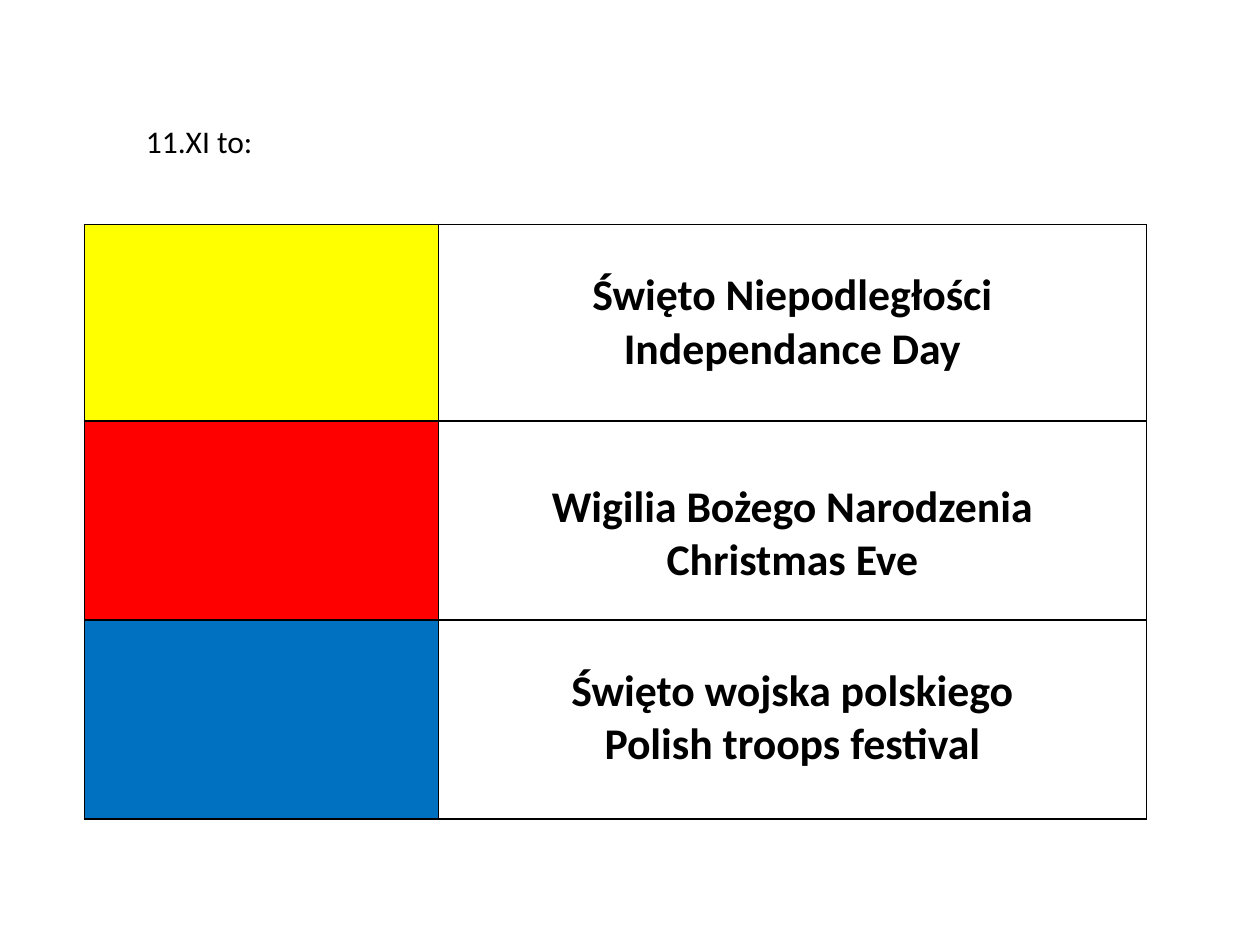
"""Build a quiz slide with three coloured answers about 11 November."""
from lxml.etree import SubElement
from pptx import Presentation
from pptx.dml.color import RGBColor
from pptx.enum.text import MSO_AUTO_SIZE, PP_ALIGN
from pptx.oxml.ns import qn
from pptx.util import Pt

BLACK = RGBColor(0, 0, 0)
YELLOW = RGBColor(0xFF, 0xFF, 0)
RED = RGBColor(0xFF, 0, 0)
BLUE = RGBColor(0, 0x70, 0xC0)
FONT = "Calibri"

QUESTION = "11.XI to:"
ANSWERS = [
    (YELLOW, "Święto Niepodległości\vIndependance Day", 112.3, 25.6),
    (RED, "Wigilia Bożego Narodzenia\nChristmas Eve", 113.8, 34.1),
    (BLUE, "Święto wojska polskiego\nPolish troops festival", 113.8, 25.6),
]
COLUMN_WIDTHS = (202.3, 404.6)


def style_text(frame, size, bold, alignment):
    for para in frame.paragraphs:
        para.alignment = alignment
        for span in para.runs:
            span.font.name = FONT
            span.font.size = Pt(size)
            span.font.bold = bold
            span.font.color.rgb = BLACK


def add_borders(cell):
    properties = cell._tc.get_or_add_tcPr()
    for side in ("a:lnL", "a:lnR", "a:lnT", "a:lnB"):
        line = SubElement(properties, qn(side), w=str(Pt(1)))
        fill = SubElement(line, qn("a:solidFill"))
        SubElement(fill, qn("a:srgbClr"), val=str(BLACK))


def add_answers(page):
    height = sum(answer[2] for answer in ANSWERS)
    table = page.shapes.add_table(
        len(ANSWERS), len(COLUMN_WIDTHS), Pt(48.2), Pt(128.2),
        Pt(sum(COLUMN_WIDTHS)), Pt(height)).table
    table.first_row = table.horz_banding = False
    for column, width in zip(table.columns, COLUMN_WIDTHS):
        column.width = Pt(width)
    for row, (color, text, row_height, top_margin) in zip(table.rows, ANSWERS):
        row.height = Pt(row_height)
        swatch, label = row.cells
        for cell in (swatch, label):
            add_borders(cell)
        swatch.fill.solid()
        swatch.fill.fore_color.rgb = color
        label.fill.background()
        label.margin_top = Pt(top_margin)
        label.text_frame.text = text
        style_text(label.text_frame, 25, True, PP_ALIGN.CENTER)


def add_question(page):
    box = page.shapes.add_textbox(Pt(76.3), Pt(66.2), Pt(76.3), Pt(29))
    frame = box.text_frame
    frame.word_wrap = False
    frame.auto_size = MSO_AUTO_SIZE.SHAPE_TO_FIT_TEXT
    frame.text = QUESTION
    style_text(frame, 18, False, PP_ALIGN.LEFT)


def main():
    deck = Presentation()
    deck.slide_width, deck.slide_height = Pt(720), Pt(540)
    page = deck.slides.add_slide(deck.slide_layouts[6])
    add_answers(page)
    add_question(page)
    deck.save("out.pptx")


if __name__ == "__main__":
    main()
